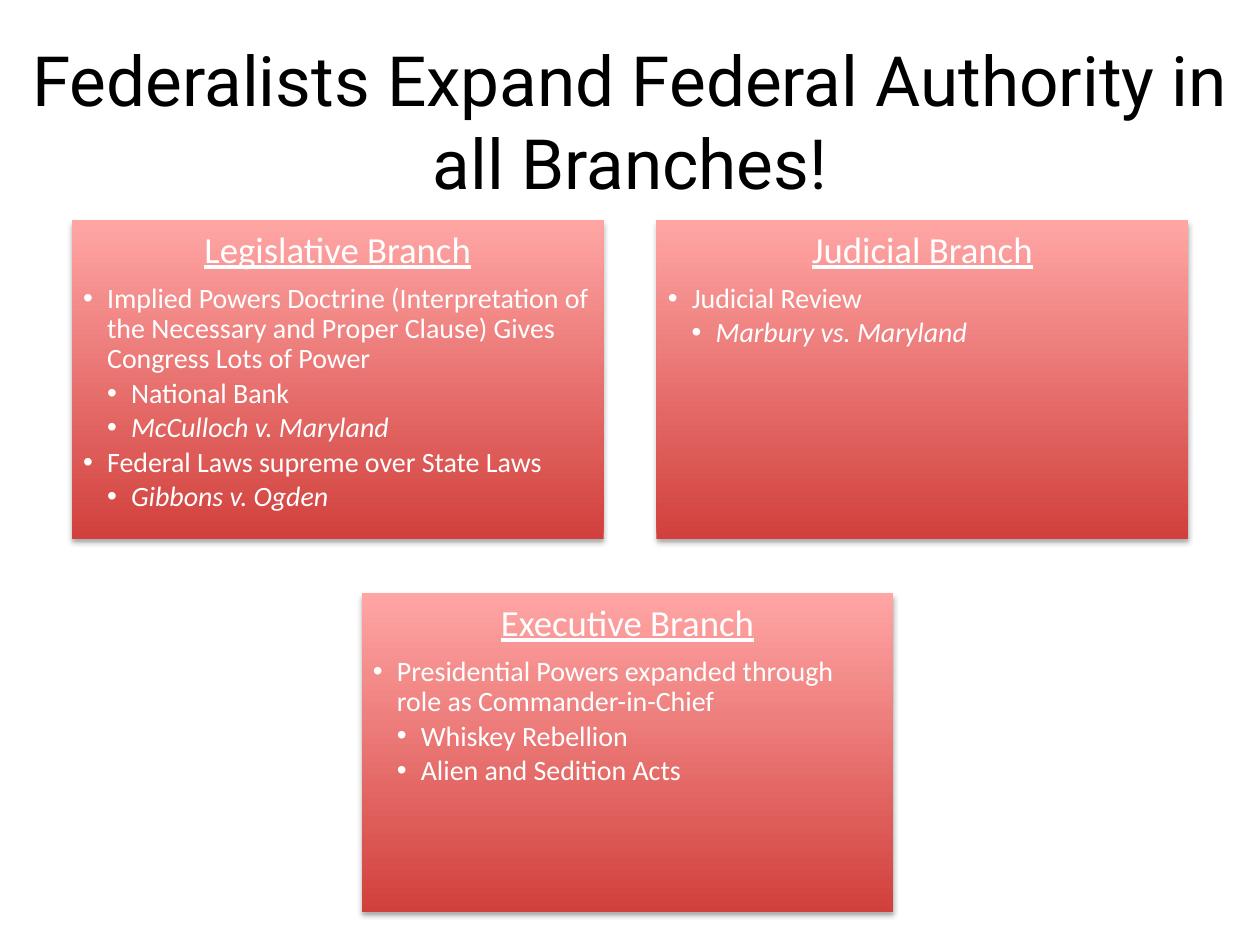
"""Builds a slide with three cards on how Federalists expanded federal authority."""
from lxml import etree
from pptx import Presentation, util as u
from pptx.dml.color import RGBColor
from pptx.enum import shapes, text
from pptx.oxml import parse_xml
from pptx.oxml.ns import nsdecls, qn

COLORS = {"dark": "D1403C", "light": "FFA6A5", "title": "000000", "text": "FFFFFF", "shadow": "000000"}
CARD_W, CARD_H = 4.22, 2.53
TOP, BOTTOM = 1.75, 4.71
INDENT = 0.19
CARDS = [
    (0.57, TOP, "Legislative Branch", [
        (1, "Implied Powers Doctrine (Interpretation of the Necessary and Proper Clause) "
            "Gives Congress Lots of Power", False),
        (2, "National Bank", False),
        (2, "McCulloch v. Maryland", True),
        (1, "Federal Laws supreme over State Laws", False),
        (2, "Gibbons v. Ogden", True)]),
    (5.21, TOP, "Judicial Branch", [
        (1, "Judicial Review", False),
        (2, "Marbury vs. Maryland", True)]),
    (2.87, BOTTOM, "Executive Branch", [
        (1, "Presidential Powers expanded through role as Commander-in-Chief", False),
        (2, "Whiskey Rebellion", False),
        (2, "Alien and Sedition Acts", False)]),
]


def style(p, font, size, color, align):
    p.alignment = align
    f = p.runs[0].font
    f.name, f.size = font, u.Pt(size)
    f.color.rgb = RGBColor.from_string(COLORS[color])
    return f


prs = Presentation()
prs.slide_width, prs.slide_height = u.Inches(10), u.Inches(7.5)
s = prs.slides.add_slide(prs.slide_layouts[5])

title = s.shapes.title
title.left, title.top, title.width, title.height = 0, 0, prs.slide_width, u.Inches(1.25)
tf = title.text_frame
tf.text = "Federalists Expand Federal Authority in all Branches!"
tf.auto_size = text.MSO_AUTO_SIZE.NONE
tf.vertical_anchor = text.MSO_ANCHOR.MIDDLE
tf.margin_top = u.Inches(0.71)
style(tf.paragraphs[0], "Roboto", 39.6, "title", text.PP_ALIGN.CENTER)

for left, top, heading, items in CARDS:
    sp = s.shapes.add_shape(shapes.MSO_SHAPE.RECTANGLE, *map(u.Inches, (left, top, CARD_W, CARD_H)))
    sp.line.fill.background()
    sp.fill.gradient()
    sp.fill.gradient_angle = 90
    for stop, key in zip(sp.fill.gradient_stops, ("dark", "light")):
        stop.color.rgb = RGBColor.from_string(COLORS[key])
    sp.shadow.inherit = False
    effects = sp._element.spPr.find(qn("a:effectLst"))
    effects.append(parse_xml(
        f'<a:outerShdw {nsdecls("a")} blurRad="{u.Pt(3.1)}" dist="{u.Pt(1.8)}" dir="5400000" '
        f'rotWithShape="0"><a:srgbClr val="{COLORS["shadow"]}"><a:alpha val="35000"/>'
        '</a:srgbClr></a:outerShdw>'))

    tf = sp.text_frame
    tf.word_wrap = True
    tf.vertical_anchor = text.MSO_ANCHOR.TOP
    tf.margin_left = tf.margin_right = tf.margin_top = tf.margin_bottom = u.Inches(0.09)
    p = tf.paragraphs[0]
    p.text = heading
    p.line_spacing, p.space_after = 0.9, u.Pt(7.35)
    style(p, "Calibri", 21, "text", text.PP_ALIGN.CENTER).underline = True
    for level, item, italic in items:
        p = tf.add_paragraph()
        p.text, p.level = item, level
        p.line_spacing, p.space_after = 0.9, u.Pt(2.4)
        style(p, "Calibri", 16, "text", text.PP_ALIGN.LEFT).italic = italic
        pPr = p._p.get_or_add_pPr()
        pPr.set("marL", str(u.Inches(INDENT * level)))
        pPr.set("indent", str(-u.Inches(INDENT)))
        etree.SubElement(pPr, qn("a:buFont")).set("typeface", "Arial")
        etree.SubElement(pPr, qn("a:buChar")).set("char", "•")

prs.save("out.pptx")
